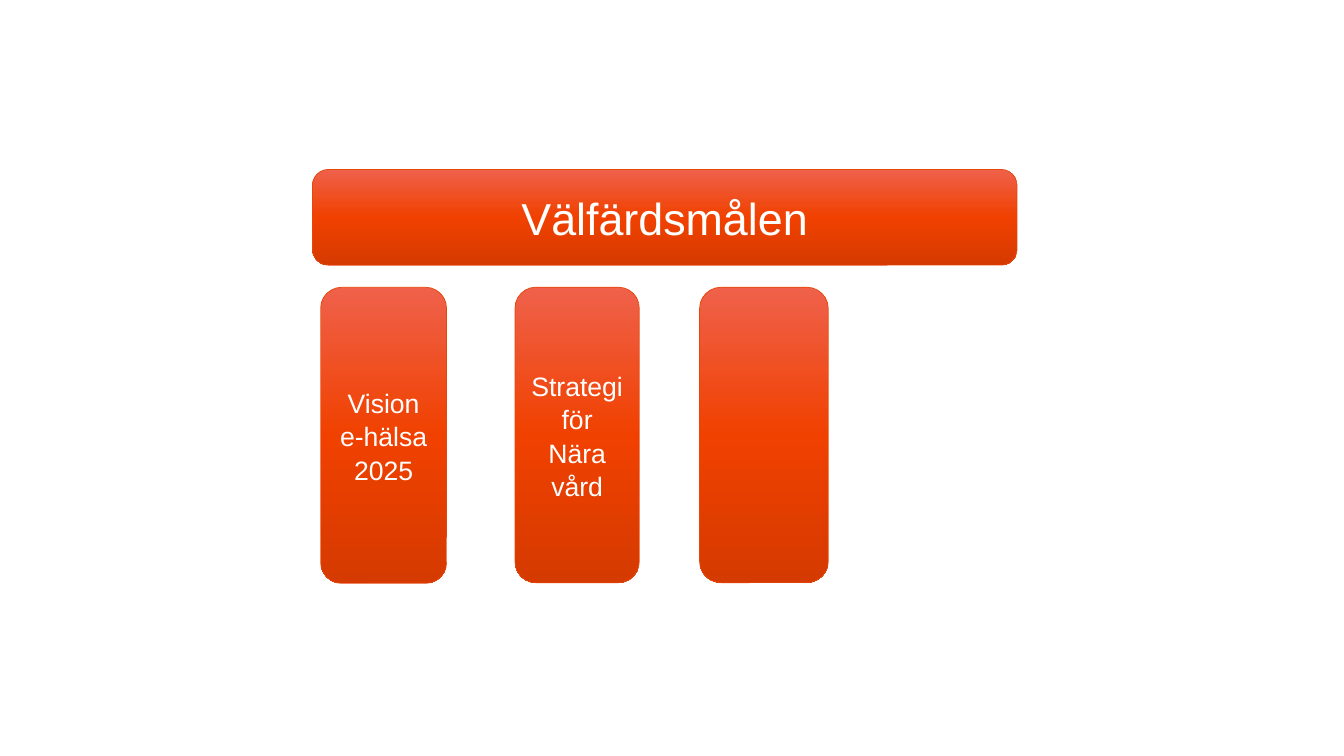
from copy import deepcopy
from dataclasses import dataclass

from pptx import Presentation
from pptx.dml.color import RGBColor
from pptx.enum.shapes import MSO_SHAPE as Shape
from pptx.enum.text import MSO_ANCHOR as Anchor, PP_ALIGN as Align
from pptx.util import Pt

GRADIENT = ((0, "EF614B"), (0.5, "F04100"), (1, "D53A00"))
OUTLINE = "E6460A"
WHITE = "FFFFFF"
FONT = "Arial"
PILLAR_TOP = 205.2


@dataclass(frozen=True)
class Block:
    left: float
    top: float
    width: float
    height: float
    text: str = ""
    size: float = 19
    spacing: float = 1.05


BLOCKS = (
    Block(223.2, 121, 503.3, 68.4, "Välfärdsmålen", size=32, spacing=1),
    Block(229, PILLAR_TOP, 90, 211.5, "Vision e-hälsa 2025"),
    Block(367.9, PILLAR_TOP, 88.7, 211, "Strategi för Nära vård"),
    Block(499.7, PILLAR_TOP, 92, 211),
)


def rgb(color: str) -> RGBColor:
    return RGBColor.from_string(color)


def fill_gradient(sp) -> None:
    """Fill the shape from top to bottom with the three gradient colours."""
    sp.fill.gradient()
    sp.fill.gradient_angle = 270
    stop_list = sp.element.spPr.find(".//{*}gsLst")
    stop_list.insert(1, deepcopy(stop_list[0]))
    for stop, (position, color) in zip(sp.fill.gradient_stops, GRADIENT):
        stop.position = position
        stop.color.rgb = rgb(color)


def add_block(slide, block: Block) -> None:
    sp = slide.shapes.add_shape(
        Shape.ROUNDED_RECTANGLE,
        Pt(block.left), Pt(block.top), Pt(block.width), Pt(block.height),
    )
    sp.shadow.inherit = False
    fill_gradient(sp)
    sp.line.color.rgb = rgb(OUTLINE)
    sp.line.width = Pt(0.5)
    if not block.text:
        return

    tf = sp.text_frame
    tf.word_wrap = True
    tf.vertical_anchor = Anchor.MIDDLE
    tf.margin_left = tf.margin_right = Pt(6.6)
    p = tf.paragraphs[0]
    p.alignment = Align.CENTER
    p.line_spacing = block.spacing
    r = p.add_run()
    r.text = block.text
    r.font.name = FONT
    r.font.size = Pt(block.size)
    r.font.color.rgb = rgb(WHITE)


def main() -> None:
    prs = Presentation()
    prs.slide_width, prs.slide_height = Pt(960), Pt(540)
    slide = prs.slides.add_slide(prs.slide_layouts[6])
    for block in BLOCKS:
        add_block(slide, block)
    prs.save("out.pptx")


if __name__ == "__main__":
    main()
